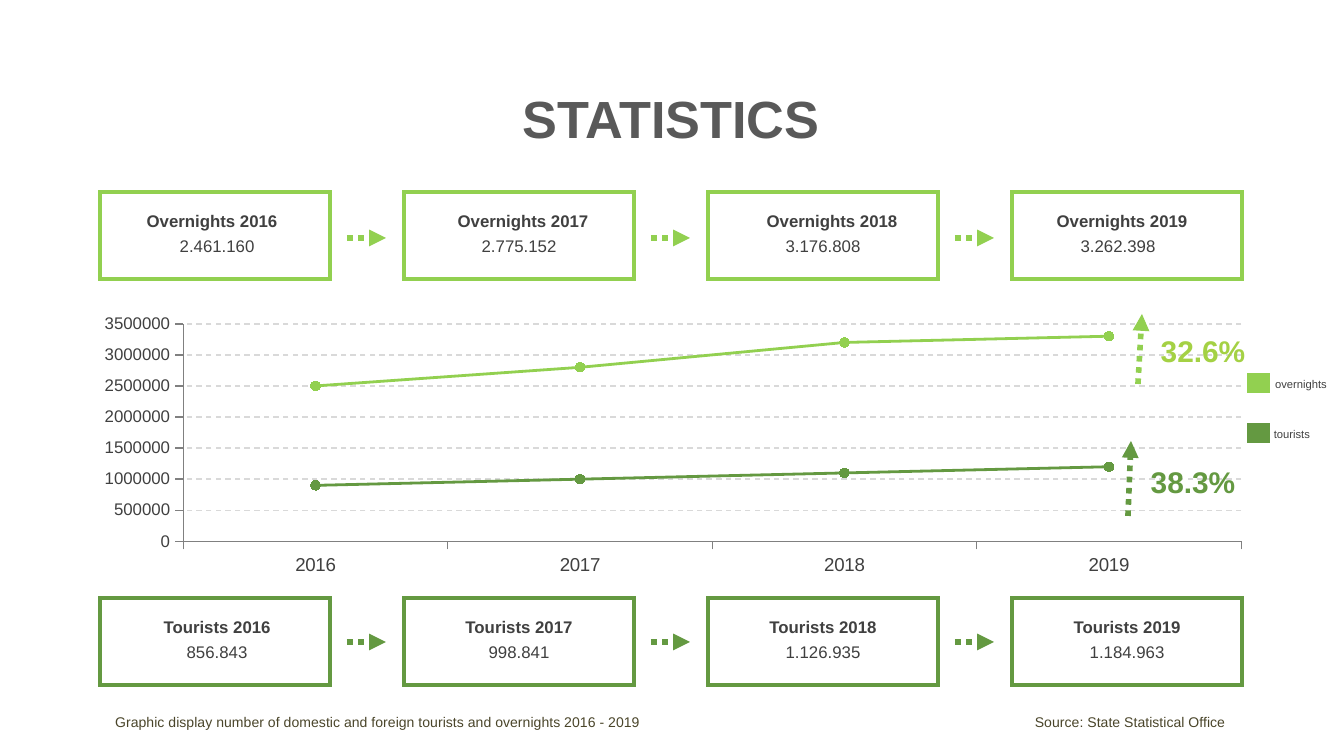
from lxml import etree
from pptx import Presentation
from pptx.chart.data import CategoryChartData
from pptx.dml.color import RGBColor
from pptx.enum.chart import XL_CHART_TYPE, XL_MARKER_STYLE, XL_TICK_MARK
from pptx.enum.dml import MSO_LINE
from pptx.enum.shapes import MSO_CONNECTOR, MSO_SHAPE
from pptx.enum.text import MSO_ANCHOR, PP_ALIGN
from pptx.oxml import parse_xml
from pptx.oxml.ns import nsdecls, qn
from pptx.util import Pt

CENTER, LEFT = PP_ALIGN.CENTER, PP_ALIGN.LEFT
RECT = MSO_SHAPE.RECTANGLE
DOTTED, DASHED = MSO_LINE.ROUND_DOT, MSO_LINE.DASH
FONT = "Arial"
COLORS = {
    "title": "595959", "text": "404040", "caption": "4A452A", "white": "FFFFFF",
    "tourists": "649941", "overnights": "92D050", "overnights growth": "A4D144",
    "grid": "D9D9D9", "axis": "808080",
}

TITLE = "STATISTICS"
YEARS = ["2016", "2017", "2018", "2019"]
# Shifts move the centred card texts sideways, in px.
ROWS = [
    {"name": "tourists", "heading": "Tourists", "top": 598, "arrow_y": 642,
     "figures": ["856.843", "998.841", "1.126.935", "1.184.963"],
     "plotted": [900000, 1000000, 1100000, 1200000],
     "heading_shifts": [2, 0, 0, 0], "figure_shifts": [2, 0, 0, 0],
     "legend_top": 421, "legend_text": (1253, 78),
     "growth": "38.3%", "growth_at": (1132, 457), "growth_color": "tourists",
     "growth_arrow": (1128, 516, 1131, 441)},
    {"name": "overnights", "heading": "Overnights", "top": 192, "arrow_y": 238,
     "figures": ["2.461.160", "2.775.152", "3.176.808", "3.262.398"],
     "plotted": [2500000, 2800000, 3200000, 3300000],
     "heading_shifts": [-3, 4, 9, -5], "figure_shifts": [2, 0, 0, -9],
     "legend_top": 371, "legend_text": (1258, 86),
     "growth": "32.6%", "growth_at": (1142, 326), "growth_color": "overnights growth",
     "growth_arrow": (1138, 384, 1142, 314)},
]
CAPTION = ("Graphic display number of domestic and foreign tourists and overnights 2016 - 2019"
           "\tSource: State Statistical Office")

SLIDE_W, SLIDE_H = 1344, 756
CARD_LEFT, CARD_STEP, CARD_W, CARD_H = 100, 304, 230, 87
CARD_TEXT_W = 170
CHART_AREA = (100, 314, 1142, 267)
PLOT = {"x": 0.073, "y": 0.037, "w": 0.927, "h": 0.815}


def px(length):
    return round(length * 914400 / 134.4)


def rgb(name):
    return RGBColor.from_string(COLORS[name])


def format_font(font, size, color, bold=False):
    font.name, font.size, font.bold = FONT, Pt(size), bold
    font.color.rgb = rgb(color)


def add_text(slide, text, area, size=9, color="text", bold=False, align=CENTER, tab=None):
    """Add a text box; tab is the place of a right tab stop in px."""
    frame = slide.shapes.add_textbox(*map(px, area)).text_frame
    frame.word_wrap = True
    paragraph = frame.paragraphs[0]
    paragraph.text = text
    paragraph.alignment = align
    if tab:
        stops = etree.SubElement(paragraph._p.get_or_add_pPr(), qn("a:tabLst"))
        etree.SubElement(stops, qn("a:tab"), pos=str(px(tab)), algn="r")
    format_font(paragraph.font, size, color, bold)


def add_rectangle(slide, area, line, fill=None):
    rectangle = slide.shapes.add_shape(RECT, *map(px, area))
    rectangle.shadow.inherit = False
    if fill:
        rectangle.fill.solid()
        rectangle.fill.fore_color.rgb = rgb(fill)
    else:
        rectangle.fill.background()
    rectangle.line.color.rgb = rgb(line)
    rectangle.line.width = Pt(2)
    etree.SubElement(rectangle.line._get_or_add_ln(), qn("a:miter"), lim="800000")


def add_arrow(slide, ends, color):
    arrow = slide.shapes.add_connector(MSO_CONNECTOR.STRAIGHT, *map(px, ends))
    arrow.line.color.rgb = rgb(color)
    arrow.line.width = Pt(3)
    arrow.line.dash_style = DOTTED
    line = arrow.line._get_or_add_ln()
    etree.SubElement(line, qn("a:miter"), lim="800000")
    etree.SubElement(line, qn("a:tailEnd"), type="triangle")
    etree.SubElement(arrow._element.spPr, qn("a:effectLst"))


def add_title(slide):
    title = slide.shapes.title
    title.left, title.top, title.width, title.height = map(px, (307, 86, 728, 71))
    title.text_frame.vertical_anchor = MSO_ANCHOR.MIDDLE
    title.text = TITLE
    paragraph = title.text_frame.paragraphs[0]
    paragraph.alignment = CENTER
    paragraph.line_spacing = 0.9
    format_font(paragraph.font, 28, "title", True)


def add_line_chart(slide):
    data = CategoryChartData()
    data.categories = YEARS
    for row in ROWS:
        data.add_series(row["heading"], row["plotted"])
    chart = slide.shapes.add_chart(
        XL_CHART_TYPE.LINE_MARKERS, *map(px, CHART_AREA), data).chart
    chart.has_legend = chart.has_title = False
    chart.plots[0].vary_by_categories = False

    for axis, size in ((chart.category_axis, 10), (chart.value_axis, 9)):
        format_font(axis.tick_labels.font, size, "text")
        axis.major_tick_mark = XL_TICK_MARK.OUTSIDE
        axis.minor_tick_mark = XL_TICK_MARK.NONE
        axis.format.line.color.rgb = rgb("axis")
        axis.format.line.width = Pt(0.75)
    values = chart.value_axis
    values.minimum_scale, values.maximum_scale, values.major_unit = 0, 3500000, 500000
    values.tick_labels.number_format = "General"
    values.tick_labels.number_format_is_linked = False
    grid = values.major_gridlines.format.line
    grid.color.rgb = rgb("grid")
    grid.width = Pt(0.75)
    grid.dash_style = DASHED

    for row, series in zip(ROWS, chart.plots[0].series):
        series.smooth = False
        series.format.line.color.rgb = rgb(row["name"])
        series.format.line.width = Pt(1.5)
        marker = series.marker
        marker.style, marker.size = XL_MARKER_STYLE.CIRCLE, 5
        marker.format.fill.solid()
        marker.format.fill.fore_color.rgb = rgb(row["name"])
        marker.format.line.color.rgb = rgb(row["name"])

    places = "".join(f'<c:{side} val="{share}"/>' for side, share in PLOT.items())
    layout = parse_xml(
        f'<c:layout {nsdecls("c")}><c:manualLayout><c:layoutTarget val="inner"/>'
        f'<c:xMode val="edge"/><c:yMode val="edge"/>{places}</c:manualLayout></c:layout>')
    plot_area = chart._chartSpace.chart.plotArea
    for automatic in plot_area.findall(qn("c:layout")):
        plot_area.remove(automatic)
    plot_area.insert(0, layout)


def add_cards(slide, row):
    top, color = row["top"], row["name"]
    cards = zip(YEARS, row["figures"], row["heading_shifts"], row["figure_shifts"])
    for i, (year, figure, heading_shift, figure_shift) in enumerate(cards):
        left = CARD_LEFT + i * CARD_STEP
        text_left = left + (CARD_W - CARD_TEXT_W) // 2
        add_rectangle(slide, (left, top, CARD_W, CARD_H), color)
        add_text(slide, f'{row["heading"]} {year}',
                 (text_left + heading_shift, top + 12, CARD_TEXT_W, 34), bold=True)
        add_text(slide, figure, (text_left + figure_shift, top + 37, CARD_TEXT_W, 34))
        if i < len(YEARS) - 1:
            start = left + CARD_W + 17
            add_arrow(slide, (start, row["arrow_y"], start + 39, row["arrow_y"]), color)


def add_growth_and_legend(slide, row):
    top = row["legend_top"]
    text_left, text_width = row["legend_text"]
    add_rectangle(slide, (1245, top, 27, 24), "white", fill=row["name"])
    add_text(slide, row["name"], (text_left, top, text_width, 27), size=6)
    add_arrow(slide, row["growth_arrow"], row["name"])
    add_text(slide, row["growth"], (*row["growth_at"], 122, 50), size=16,
             color=row["growth_color"], bold=True)


def main():
    deck = Presentation()
    deck.slide_width, deck.slide_height = px(SLIDE_W), px(SLIDE_H)
    slide = deck.slides.add_slide(deck.slide_layouts[5])
    add_title(slide)
    add_line_chart(slide)
    for row in ROWS:
        add_cards(slide, row)
        add_growth_and_legend(slide, row)
    add_text(slide, CAPTION, (102, 707, 1141, 31), size=7.5, color="caption",
             align=LEFT, tab=1110)
    deck.save("out.pptx")


if __name__ == "__main__":
    main()
